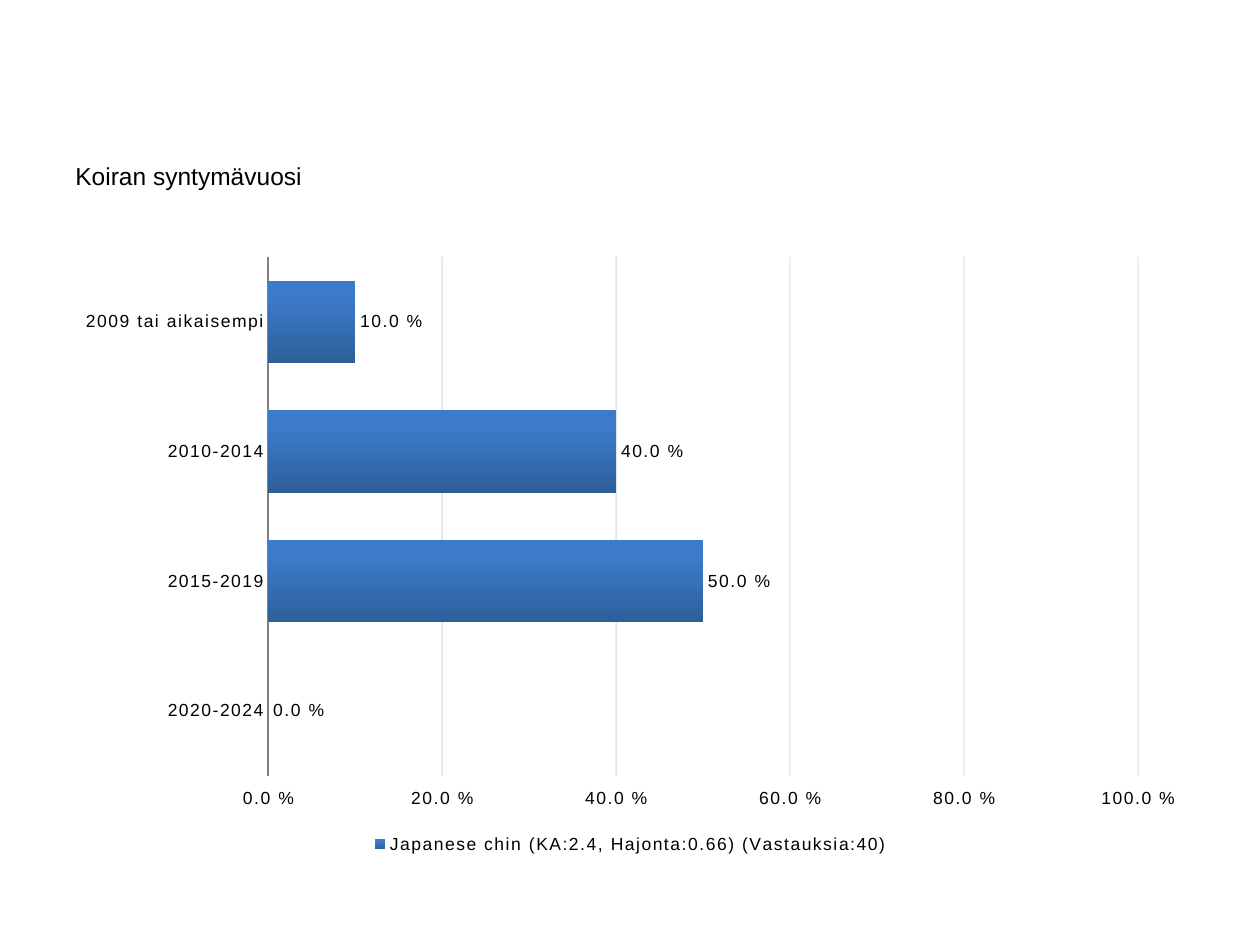
import lxml.etree
import pptx
import pptx.chart.data
import pptx.dml.color
import pptx.enum.chart
import pptx.oxml
import pptx.oxml.ns
import pptx.util

SCALE = 914400 / 126
FONT = "Arial"
COLORS = {"text": "000000", "grid": "4F81BD", "axis": "808080",
          "bar_bottom": "2E5F99", "bar_top": "3C7BC9"}
PERCENT = r"0.0\ %"
SERIES = "Japanese chin (KA:2.4, Hajonta:0.66) (Vastauksia:40)"
SHARES = {"2009 tai aikaisempi": 0.1, "2010-2014": 0.4,
          "2015-2019": 0.5, "2020-2024": 0}


def px(length):
    """Turn pixels into EMU."""
    return pptx.util.Emu(round(length * SCALE))


def color(name):
    """Look up a palette colour."""
    return pptx.dml.color.RGBColor.from_string(COLORS[name])


def style_font(font, size):
    """Give a font the slide's face and colour."""
    font.name = FONT
    font.size = pptx.util.Pt(size)
    font.color.rgb = color("text")


def style_label(font):
    """Style chart text with widened letter spacing."""
    style_font(font, 10)
    font._element.set("spc", "100")


def sub(parent, tag, **attributes):
    """Append a namespaced child element."""
    return lxml.etree.SubElement(parent, pptx.oxml.ns.qn(tag), attributes)


def place_plot(plot_area, left, top, width, height):
    """Fix the inner plot area as fractions of the chart."""
    for old in plot_area.findall(pptx.oxml.ns.qn("c:layout")):
        plot_area.remove(old)
    layout = pptx.oxml.parse_xml(
        "<c:layout %s/>" % pptx.oxml.ns.nsdecls("c"))
    manual = sub(layout, "c:manualLayout")
    sub(manual, "c:layoutTarget", val="inner")
    sub(manual, "c:xMode", val="edge")
    sub(manual, "c:yMode", val="edge")
    for key, value in zip("xywh", (left, top, width, height)):
        sub(manual, "c:" + key, val=f"{value:.3f}")
    plot_area.insert(0, layout)


def add_title(page, left, top, width, height):
    """Write the question above the chart."""
    box = page.shapes.add_textbox(px(left), px(top), px(width), px(height))
    box.text_frame.word_wrap = True
    para = box.text_frame.paragraphs[0]
    para.text = "Koiran syntymävuosi"
    para.space_before = pptx.util.Pt(3)
    style_font(para.font, 14)


def style_axes(chart):
    """Set scales, labels, lines and gridlines."""
    kinds = pptx.enum.chart
    categories, values = chart.category_axis, chart.value_axis
    for axis in (categories, values):
        axis.major_tick_mark = kinds.XL_TICK_MARK.NONE
        axis.minor_tick_mark = kinds.XL_TICK_MARK.NONE
        style_label(axis.tick_labels.font)
    categories.reverse_order = True
    categories.format.line.color.rgb = color("axis")
    categories.format.line.width = pptx.util.Pt(1)
    values.tick_label_position = kinds.XL_TICK_LABEL_POSITION.HIGH
    values.minimum_scale, values.maximum_scale, values.major_unit = 0, 1, 0.2
    values.tick_labels.number_format = PERCENT
    values.tick_labels.number_format_is_linked = False
    values.format.line.fill.background()
    grid = values.major_gridlines.format.line
    grid.color.rgb = color("grid")
    grid.width = pptx.util.Pt(0.75)
    tint = values.major_gridlines._xAx.find(".//" + pptx.oxml.ns.qn("c:majorGridlines"))
    sub(tint.find(".//" + pptx.oxml.ns.qn("a:srgbClr")), "a:alpha", val="20000")


def style_bars(plot):
    """Shade the bars and label their ends."""
    plot.gap_width = 58
    plot.vary_by_categories = False
    fill = plot.series[0].format.fill
    fill.gradient()
    fill.gradient_angle = 90
    for stop, name, position in zip(fill.gradient_stops,
                                    ("bar_bottom", "bar_top"), (0, 0.8)):
        stop.color.rgb = color(name)
        stop.position = position
    labels = plot.series[0].data_labels
    labels.show_value = True
    labels.number_format = PERCENT
    labels.number_format_is_linked = False
    labels.position = pptx.enum.chart.XL_LABEL_POSITION.OUTSIDE_END
    style_label(labels.font)


def add_birth_chart(page, left, top, width, height):
    """Draw the share of dogs in each birth period."""
    data = pptx.chart.data.CategoryChartData(number_format=PERCENT)
    data.categories = list(SHARES)
    data.add_series(SERIES, list(SHARES.values()))
    chart = page.shapes.add_chart(
        pptx.enum.chart.XL_CHART_TYPE.BAR_CLUSTERED,
        px(left), px(top), px(width), px(height), data).chart
    style_font(chart.font, 10)
    chart.has_title = False
    chart.has_legend = True
    chart.legend.position = pptx.enum.chart.XL_LEGEND_POSITION.BOTTOM
    chart.legend.include_in_layout = False
    style_label(chart.legend.font)
    style_axes(chart)
    style_bars(chart.plots[0])
    place_plot(chart._chartSpace.chart.plotArea,
               205 / width, 13 / height, 870 / width, 519 / height)


def main():
    """Build and save the slide."""
    deck = pptx.Presentation()
    deck.slide_width, deck.slide_height = px(1260), px(945)
    page = deck.slides.add_slide(deck.slide_layouts[6])
    add_title(page, 63, 155, 1134, 74)
    add_birth_chart(page, 63, 244, 1134, 615)
    deck.save("out.pptx")


if __name__ == "__main__":
    main()
